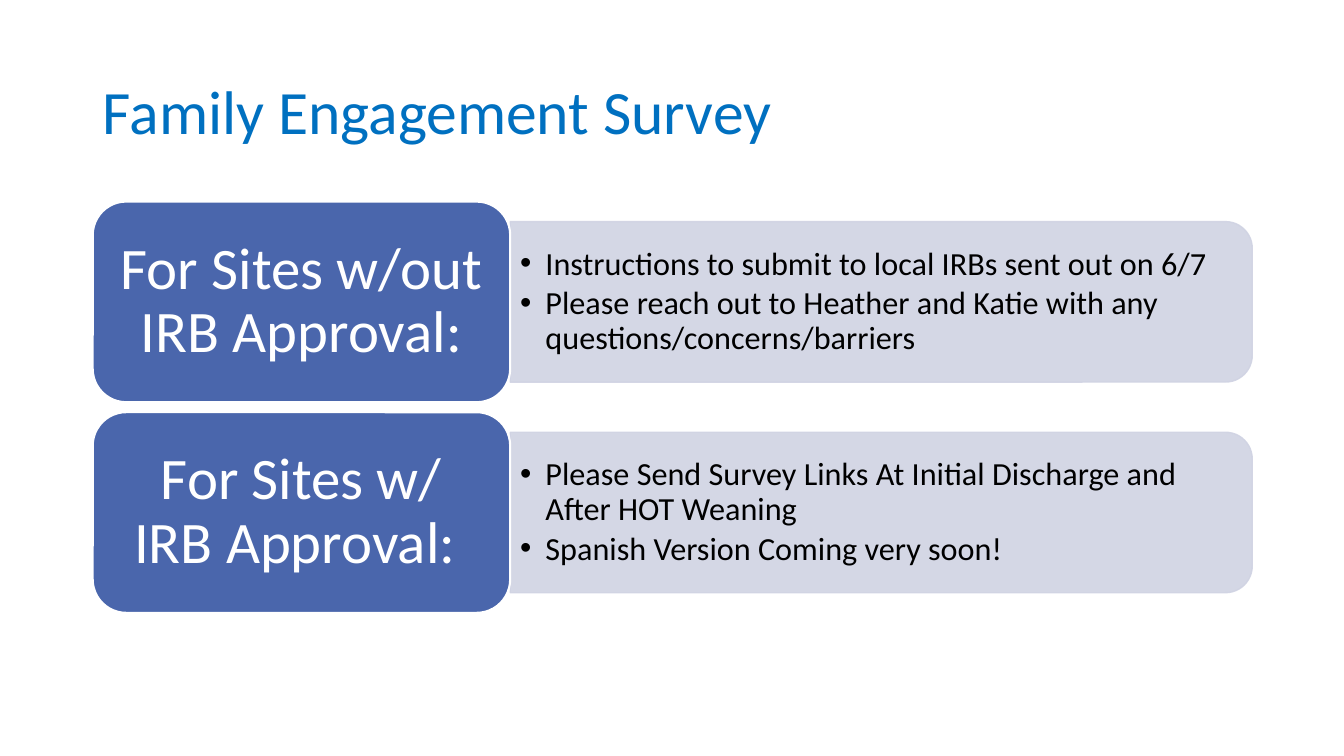
from lxml import etree
from pptx import Presentation
from pptx.dml.color import RGBColor
from pptx.enum.shapes import MSO_SHAPE
from pptx.enum.text import MSO_ANCHOR, MSO_AUTO_SIZE, PP_ALIGN
from pptx.oxml.ns import qn
from pptx.util import Inches, Pt

LEFT, CENTER = PP_ALIGN.LEFT, PP_ALIGN.CENTER
MIDDLE = MSO_ANCHOR.MIDDLE
NO_FIT = MSO_AUTO_SIZE.NONE
ROUNDED = MSO_SHAPE.ROUNDED_RECTANGLE
ROUND_TOP = MSO_SHAPE.ROUND_2_SAME_RECTANGLE
TWO_CONTENT = 3

COLORS = {"title": "0070C0", "label": "4A66AC", "panel": "D0D3E3",
          "text": "000000", "white": "FFFFFF"}

# Grid: 25 columns; one row is the height of a label
GRID_LEFT, GRID_TOP = 0.92, 2
COL, ROW = 0.46, 1.99
LABEL_COLS, PANEL_COLS = 9, 16
ROW_PITCH = 1.05

SITES = [
    ("For Sites w/out IRB Approval:",
     ["Instructions to submit to local IRBs sent out on 6/7",
      "Please reach out to Heather and Katie with any questions/concerns/barriers"]),
    ("For Sites w/ IRB Approval: ",
     ["Please Send Survey Links At Initial Discharge and After HOT Weaning",
      "Spanish Version Coming very soon!"]),
]


class SurveySlide:
    font = "Calibri"
    line_spacing = 0.9

    def __init__(self, prs):
        self.s = prs.slides.add_slide(prs.slide_layouts[TWO_CONTENT])
        self.title_box, *self.list_boxes = self.s.placeholders

    def grid(self, col, row, cols, rows):
        return (Inches(GRID_LEFT + col * COL), Inches(GRID_TOP + row * ROW),
                Inches(cols * COL), Inches(rows * ROW))

    def place(self, sp, *cells):
        sp.left, sp.top, sp.width, sp.height = self.grid(*cells)

    def set_text(self, sp, lines, size, color, align, margins=(0.1, 0.05), after=0):
        tf = sp.text_frame
        side, edge = map(Inches, margins)
        frame = {"word_wrap": True, "auto_size": NO_FIT, "vertical_anchor": MIDDLE,
                 "margin_left": side, "margin_right": side,
                 "margin_top": edge, "margin_bottom": edge}
        for name, value in frame.items():
            setattr(tf, name, value)
        tf.text = "\n".join(lines)
        paragraph = {"alignment": align, "line_spacing": self.line_spacing,
                     "space_before": Pt(0), "space_after": Pt(after)}
        for p in tf.paragraphs:
            for name, value in paragraph.items():
                setattr(p, name, value)
            for r in p.runs:
                r.font.name, r.font.size = self.font, Pt(size)
                r.font.color.rgb = RGBColor.from_string(COLORS[color])

    def shape(self, kind, box, fill, line, width):
        sp = self.s.shapes.add_shape(kind, *box)
        sp.shadow.inherit = False
        sp.fill.solid()
        sp.fill.fore_color.rgb = RGBColor.from_string(COLORS[fill])
        sp.line.color.rgb = RGBColor.from_string(COLORS[line])
        sp.line.width = Pt(width)
        return sp

    def title(self, text):
        self.place(self.title_box, 0, -0.8, 25, 0.73)
        self.set_text(self.title_box, [text], 44, "title", LEFT)

    def panel(self, row):
        """Add a panel whose rounded end is turned to the right."""
        x, y, w, h = self.grid(LABEL_COLS, row + 0.1, PANEL_COLS, 0.8)
        upright = (x + (w - h) // 2, y + (h - w) // 2, h, w)
        sp = self.shape(ROUND_TOP, upright, "panel", "panel", 1)
        sp.rotation = 90
        for clr in sp._element.spPr.iter(qn("a:srgbClr")):
            etree.SubElement(clr, qn("a:alpha")).set("val", "90000")

    def bullets(self, sp, row, lines):
        self.place(sp, LABEL_COLS, row + 0.14, 15.83, 0.72)
        self.set_text(sp, lines, 23, "text", LEFT, after=3.5)
        for p in sp.text_frame.paragraphs:
            pPr = p._p.get_or_add_pPr()
            pPr.set("marL", str(Inches(0.25)))
            pPr.set("indent", str(-Inches(0.25)))
        self.s.shapes._spTree.append(sp._element)  # bring in front of the panel

    def label(self, row, text):
        box = self.grid(0, row, LABEL_COLS, 1)
        sp = self.shape(ROUNDED, box, "label", "white", 1.5)
        self.set_text(sp, [text], 42, "white", CENTER, (0.17, 0.09))


def main():
    prs = Presentation()
    prs.slide_width, prs.slide_height = Inches(13.33), Inches(7.5)
    slide = SurveySlide(prs)
    slide.title("Family Engagement Survey")
    for i, (site, steps) in enumerate(SITES):
        row = i * ROW_PITCH
        slide.panel(row)
        slide.bullets(slide.list_boxes[i], row, steps)
        slide.label(row, site)
    prs.save("out.pptx")


if __name__ == "__main__":
    main()
